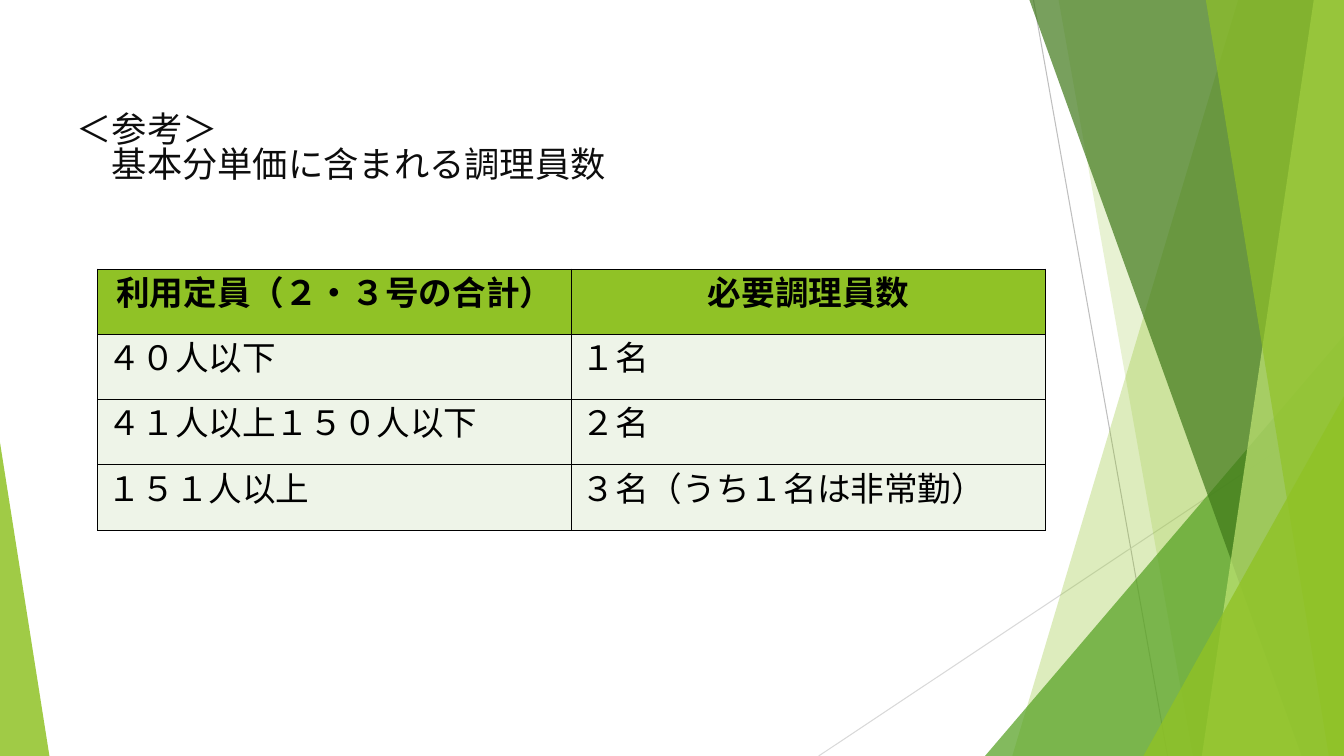
from dataclasses import dataclass

from lxml.etree import SubElement
from pptx import Presentation
from pptx.dml.color import RGBColor
from pptx.enum.shapes import MSO_CONNECTOR, MSO_SHAPE
from pptx.enum.text import MSO_ANCHOR, PP_ALIGN
from pptx.oxml.ns import qn
from pptx.util import Inches, Pt


@dataclass(frozen=True)
class Theme:
    lime: str = "90C226"
    green: str = "54A021"
    forest: str = "3F7819"
    pale: str = "C0E474"
    row: str = "EEF4E8"
    ink: str = "000000"
    title_ink: str = "0D0D0D"
    steep_line: str = "BFBFBF"
    shallow_line: str = "D9D9D9"
    title_size: float = 25.2
    table_size: float = 24
    title_font: str = "Noto Sans CJK JP"
    table_font: str = "Roboto"


@dataclass(frozen=True)
class Box:
    """A region of the page, in inches."""
    left: float
    top: float
    width: float
    height: float

    @property
    def right(self):
        return self.left + self.width

    @property
    def bottom(self):
        return self.top + self.height

    def lengths(self):
        return [Inches(n) for n in (self.left, self.top, self.width, self.height)]


THEME = Theme()
PAGE = Box(0, 0, 13.33, 7.5)
TITLE = Box(0.31, 0.98, 9.19, 1)
TABLE = Box(0.97, 2.67, 9.4, 2.59)
TABLE_ROWS = [
    ("利用定員（２・３号の合計）", "必要調理員数"),
    ("４０人以下", "１名"),
    ("４１人以上１５０人以下", "２名"),
    ("１５１人以上", "３名（うち１名は非常勤）"),
]


def add_text(para, text, *, font, size, color, bold=False, align=PP_ALIGN.LEFT):
    para.alignment = align
    span = para.add_run()
    span.text = text
    span.font.name = font
    span.font.size = Pt(size)
    span.font.bold = bold
    span.font.color.rgb = RGBColor.from_string(color)
    SubElement(span.font._element, qn("a:ea"), typeface=font)


def paint(shape, color, opacity):
    """Fill a shape with a see-through colour and remove its line and shadow."""
    shape.shadow.inherit = False
    shape.line.fill.background()
    shape.fill.solid()
    shape.fill.fore_color.rgb = RGBColor.from_string(color)
    tint = shape._element.spPr.find(qn("a:solidFill"))[0]
    SubElement(tint, qn("a:alpha"), val=str(opacity * 1000))


def add_line(page, start, end, color):
    line = page.shapes.add_connector(
        MSO_CONNECTOR.STRAIGHT, *[Inches(n) for n in (*start, *end)])
    line.line.color.rgb = RGBColor.from_string(color)
    line.line.width = Pt(0.75)
    SubElement(line._element.spPr, qn("a:effectLst"))


def add_facet(page, box, top_inset, bottom_inset, color, opacity):
    """Fill from a slanted edge, given by its insets, to the right side of the box."""
    corners = [(box.right - top_inset, box.top), (box.right, box.top),
               (box.right, box.bottom), (box.right - bottom_inset, box.bottom)]
    points = [(Inches(x), Inches(y)) for x, y in corners]
    outline = page.shapes.build_freeform(*points[0])
    outline.add_line_segments(points[1:], close=True)
    paint(outline.convert_to_shape(), color, opacity)


def add_corner(page, box, width, height, color, opacity, at_right=True):
    """Fill a bottom corner of the box with a right-angled triangle."""
    left = box.right - width if at_right else box.left
    place = Box(left, box.bottom - height, width, height)
    corner = page.shapes.add_shape(MSO_SHAPE.ISOSCELES_TRIANGLE, *place.lengths())
    corner.adjustments[0] = 1 if at_right else 0
    paint(corner, color, opacity)


def add_decoration(page, box):
    add_line(page, (box.right - 3.08, box.top), (box.right - 1.75, box.bottom),
             THEME.steep_line)
    add_line(page, (box.right, box.bottom - 3.47), (box.right - 5.21, box.bottom),
             THEME.shallow_line)
    add_facet(page, box, 1.05, 3.29, THEME.lime, 30)
    add_facet(page, box, 2.83, 1.5, THEME.lime, 20)
    add_corner(page, box, 3.56, 4.17, THEME.green, 72)
    add_facet(page, box, 3.12, 0.42, THEME.forest, 70)
    add_facet(page, box, 0.3, 1.41, THEME.pale, 70)
    add_facet(page, box, 1.37, 0.15, THEME.lime, 65)
    add_corner(page, box, 1.99, 3.57, THEME.lime, 80)
    add_corner(page, box, 0.49, 3.11, THEME.lime, 85, at_right=False)


def add_title(page, box):
    frame = page.shapes.add_textbox(*box.lengths()).text_frame
    frame.word_wrap = True
    frame.vertical_anchor = MSO_ANCHOR.MIDDLE
    for level, text in enumerate(("＜参考＞", "基本分単価に含まれる調理員数"), start=1):
        para = frame.paragraphs[0] if level == 1 else frame.add_paragraph()
        para.line_spacing = 0.84
        indent = Pt(THEME.title_size * level)
        para._p.get_or_add_pPr().set("marL", str(indent))
        add_text(para, text, font=THEME.title_font, size=THEME.title_size,
                 color=THEME.title_ink)


def add_borders(cell):
    properties = cell._tc.get_or_add_tcPr()
    for index, side in enumerate(("lnL", "lnR", "lnT", "lnB")):
        border = properties.makeelement(qn(f"a:{side}"), {"w": str(Pt(1))})
        fill = SubElement(border, qn("a:solidFill"))
        SubElement(fill, qn("a:srgbClr"), val=THEME.ink)
        properties.insert(index, border)


def add_staff_table(page, box):
    columns = len(TABLE_ROWS[0])
    table = page.shapes.add_table(len(TABLE_ROWS), columns, *box.lengths()).table
    for row_index, texts in enumerate(TABLE_ROWS):
        header = row_index == 0
        table.rows[row_index].height = Inches(box.height / len(TABLE_ROWS))
        for column_index, text in enumerate(texts):
            cell = table.cell(row_index, column_index)
            cell.fill.solid()
            cell.fill.fore_color.rgb = RGBColor.from_string(
                THEME.lime if header else THEME.row)
            add_borders(cell)
            add_text(cell.text_frame.paragraphs[0], text, font=THEME.table_font,
                     size=THEME.table_size, color=THEME.ink, bold=header,
                     align=PP_ALIGN.CENTER if header else PP_ALIGN.LEFT)


def main():
    deck = Presentation()
    deck.slide_width = Inches(PAGE.width)
    deck.slide_height = Inches(PAGE.height)
    page = deck.slides.add_slide(deck.slide_layouts[6])
    add_decoration(page, PAGE)
    add_title(page, TITLE)
    add_staff_table(page, TABLE)
    deck.save("out.pptx")


if __name__ == "__main__":
    main()
